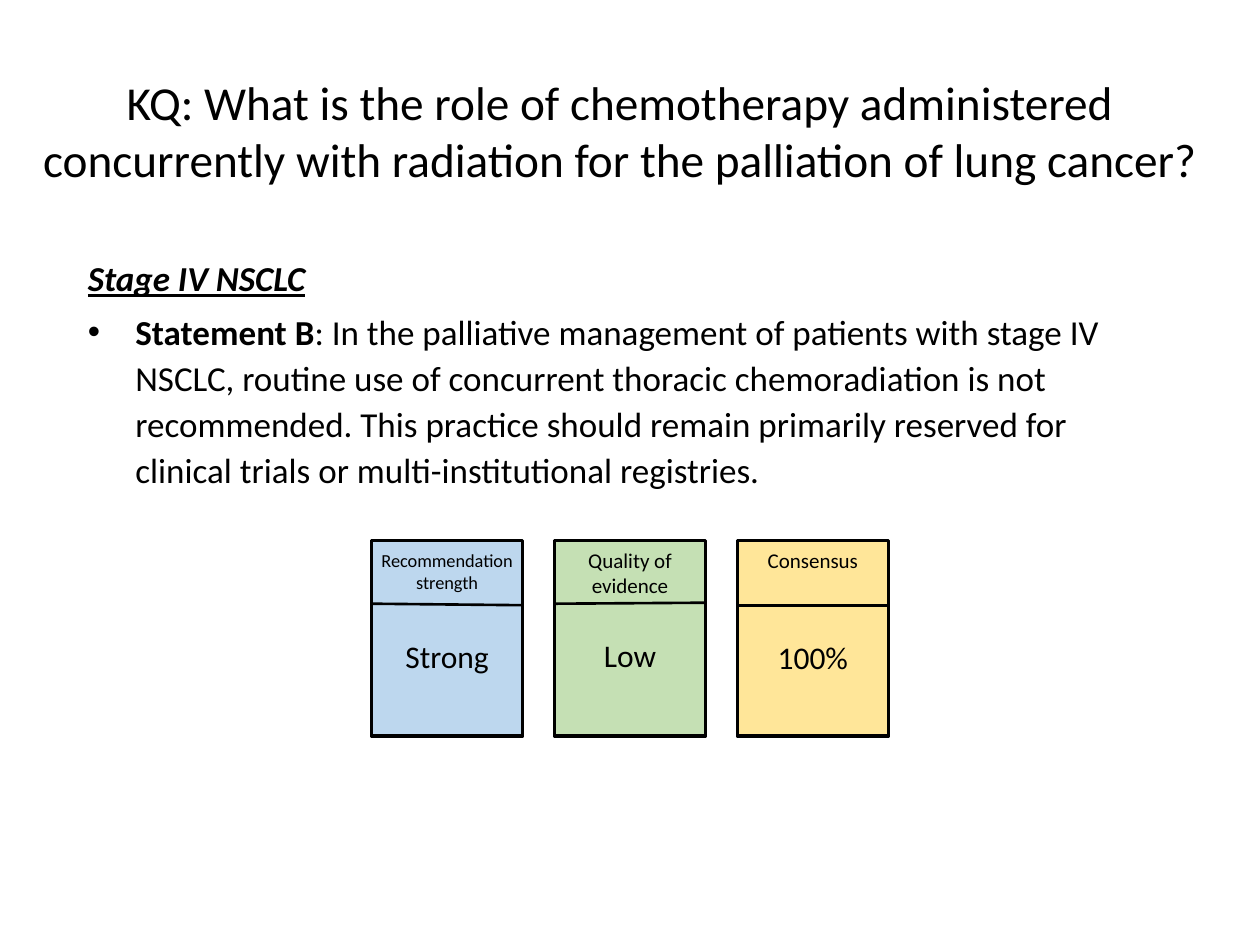
from pptx import Presentation
from pptx.dml.color import RGBColor
from pptx.enum.shapes import MSO_CONNECTOR as Connector, MSO_SHAPE as Shape
from pptx.enum.text import MSO_ANCHOR as Anchor, PP_ALIGN as Align
from pptx.oxml.ns import qn
from pptx.util import Cm, Pt
from lxml.etree import SubElement

BLACK = RGBColor(0x00, 0x00, 0x00)
BLUE = RGBColor(0xBD, 0xD7, 0xEE)
GREEN = RGBColor(0xC5, 0xE0, 0xB4)
YELLOW = RGBColor(0xFF, 0xE6, 0x99)

TITLE = ("KQ: What is the role of chemotherapy administered concurrently "
         "with radiation for the palliation of lung cancer?")
STATEMENT = (": In the palliative management of patients with stage IV NSCLC, "
             "routine use of concurrent thoracic chemoradiation is not recommended. "
             "This practice should remain primarily reserved for clinical trials "
             "or multi-institutional registries.")
CARDS = [
    {"label": "Recommendation strength", "value": "Strong", "fill": BLUE,
     "label_size": 10.5, "label_insets": (0.1, 0.18), "ends": (1.27, 1.3)},
    {"label": "Quality of evidence", "value": "Low", "fill": GREEN,
     "ends": (1.27, 1.25)},
    {"label": "Consensus", "value": "100%", "fill": YELLOW,
     "label_height": 0.76, "ends": (1.3, 1.3)},
]


def add_run(paragraph, text, size, bold=False, italic=False, underline=False):
    run = paragraph.add_run()
    run.text = text
    font = run.font
    font.name, font.size, font.color.rgb = "Calibri", Pt(size), BLACK
    font.bold, font.italic, font.underline = bold, italic, underline


def add_text(shapes, box, text, align=Align.LEFT, insets=(0.25, 0.13), top_inset=None,
             **run_format):
    text_box = shapes.add_textbox(*(Cm(length) for length in box))
    frame = text_box.text_frame
    frame.word_wrap = True
    frame.vertical_anchor = Anchor.TOP
    side, end = insets
    frame.margin_left = frame.margin_right = Cm(side)
    frame.margin_top = Cm(end if top_inset is None else top_inset)
    frame.margin_bottom = Cm(end)
    paragraph = frame.paragraphs[0]
    paragraph.alignment = align
    add_run(paragraph, text, **run_format)
    return frame


def add_bullet(paragraph, indent):
    properties = paragraph._p.get_or_add_pPr()
    properties.set("marL", str(Cm(indent)))
    properties.set("indent", str(-Cm(indent)))
    SubElement(properties, qn("a:buFont"), typeface="Arial")
    SubElement(properties, qn("a:buChar"), char="•")


def add_statement(shapes, box):
    frame = add_text(shapes, box, "Stage IV NSCLC", size=20,
                     bold=True, italic=True, underline=True)
    paragraph = frame.add_paragraph()
    add_bullet(paragraph, 0.96)
    paragraph.line_spacing = 1.1
    paragraph.space_before = Pt(4)
    add_run(paragraph, "Statement B", 20, bold=True)
    add_run(paragraph, STATEMENT, 20)


def add_card(shapes, box, label, value, fill, ends, label_size=12,
             label_insets=(0.25, 0.13), label_height=1.27):
    left, top, width, height = box
    group = shapes.add_group_shape().shapes
    card = group.add_shape(Shape.RECTANGLE, *(Cm(length) for length in box))
    card.shadow.inherit = False
    card.fill.solid()
    card.fill.fore_color.rgb = fill
    card.line.color.rgb = BLACK
    card.line.width = Pt(2)

    start, end = ends
    divider = group.add_connector(Connector.STRAIGHT, Cm(left), Cm(top + start),
                                  Cm(left + width), Cm(top + end))
    divider.line.color.rgb = BLACK
    divider.line.width = Pt(1.5)
    SubElement(divider._element.spPr, qn("a:effectLst"))

    add_text(group, (left, top, width, label_height), label, align=Align.CENTER,
             insets=label_insets, size=label_size)
    add_text(group, (left, top + min(ends), width, 1.6), value, align=Align.CENTER,
             insets=(0.1, 0.13), top_inset=0.71, size=18)


def add_cards(shapes, box, gap):
    left, top, width, height = box
    card_width = (width - gap * (len(CARDS) - 1)) / len(CARDS)
    for index, card in enumerate(CARDS):
        card_left = left + index * (card_width + gap)
        add_card(shapes, (card_left, top, card_width, height), **card)


def main():
    presentation = Presentation()
    presentation.slide_width, presentation.slide_height = Cm(25.4), Cm(19.05)
    slide = presentation.slides.add_slide(presentation.slide_layouts[6])
    add_text(slide.shapes, (0.43, 1.35, 24.13, 3.18), TITLE, align=Align.CENTER, size=27)
    add_statement(slide.shapes, (1.52, 5.05, 22.35, 4.83))
    add_cards(slide.shapes, (7.49, 10.9, 10.42, 3.94), gap=0.64)
    presentation.save("out.pptx")


if __name__ == "__main__":
    main()
